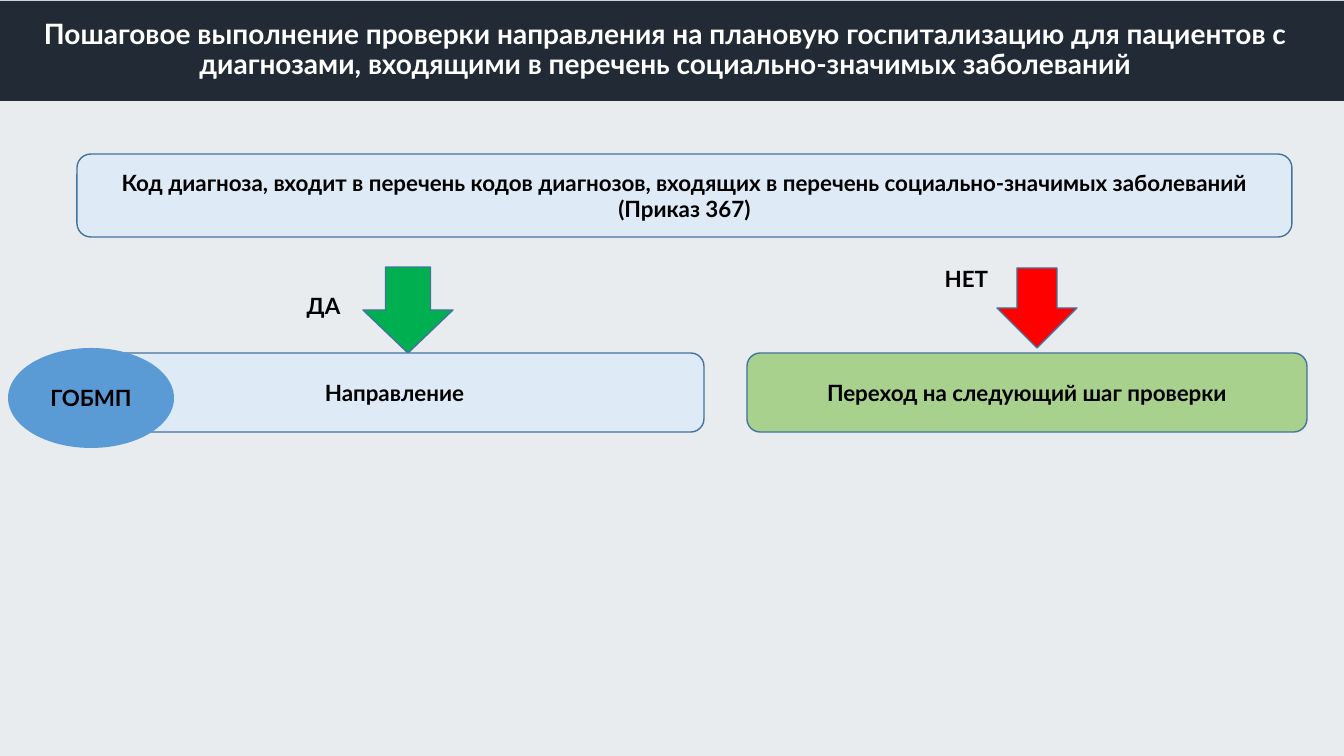
from lxml import etree
from pptx import Presentation
from pptx.dml.color import RGBColor
from pptx.enum.shapes import MSO_SHAPE
from pptx.enum.text import MSO_ANCHOR, PP_ALIGN
from pptx.oxml.ns import qn
from pptx.util import Emu, Pt

RECT = MSO_SHAPE.RECTANGLE
ROUND = MSO_SHAPE.ROUNDED_RECTANGLE
OVAL = MSO_SHAPE.OVAL
ARROW = MSO_SHAPE.DOWN_ARROW
MIDDLE, TOP = MSO_ANCHOR.MIDDLE, MSO_ANCHOR.TOP
CENTER, RIGHT = PP_ALIGN.CENTER, PP_ALIGN.RIGHT

SCALE = 914400 / 100.8
WIDE, HIGH = 1344, 756
FONT = "Lato"

WHITE = RGBColor(0xFF, 0xFF, 0xFF)
BLACK = RGBColor(0, 0, 0)
TINT = RGBColor(0x2C, 0x4A, 0x64)
NAVY = RGBColor(0x22, 0x2A, 0x35)
PALE = RGBColor(0xDE, 0xEB, 0xF7)
LIME = RGBColor(0xA9, 0xD1, 0x8E)
BLUE = RGBColor(0x5B, 0x9B, 0xD5)
EDGE = RGBColor(0x43, 0x73, 0x9E)
GREEN = RGBColor(0x00, 0xB0, 0x50)
RED = RGBColor(0xFF, 0x00, 0x00)


def px(n):
    """Turn pixels into EMU."""
    return Emu(round(n * SCALE))


def write(shape, text, size=16, color=BLACK, align=CENTER, anchor=MIDDLE):
    """Put one bold run of text into a shape."""
    frame = shape.text_frame
    frame.word_wrap = True
    frame.vertical_anchor = anchor
    para = frame.paragraphs[0]
    para.alignment = align
    run = para.add_run()
    run.text = text
    font = run.font
    font.name, font.size, font.bold = FONT, Pt(size), True
    font.color.rgb = color
    return para


def block(slide, kind, area, fill, edge=None, text=None):
    """Add a filled shape, with an outline and text where given."""
    shape = slide.shapes.add_shape(kind, *map(px, area))
    shape.shadow.inherit = False
    shape.fill.solid()
    shape.fill.fore_color.rgb = fill
    if edge is None:
        shape.line.fill.background()
    else:
        shape.line.color.rgb = edge
        shape.line.width = Pt(1)
    if text:
        write(shape, text)
    return shape


def label(slide, area, text, **style):
    """Add a text box and return its paragraph."""
    return write(slide.shapes.add_textbox(*map(px, area)), text, **style)


def fade(shape, percent):
    """Set the opacity of a solid fill."""
    color = shape.fill._xPr.find(qn("a:solidFill"))[0]
    etree.SubElement(color, qn("a:alpha")).set("val", str(percent * 1000))


def main():
    """Build and save the slide."""
    deck = Presentation()
    deck.slide_width, deck.slide_height = px(WIDE), px(HIGH)
    slide = deck.slides.add_slide(deck.slide_layouts[6])

    fade(block(slide, RECT, (0, -2, WIDE, HIGH + 2), TINT), 10)
    block(slide, RECT, (0, 1, WIDE, 100), NAVY)
    title = label(
        slide, (0, 18, 1331, 64),
        "Пошаговое выполнение проверки направления на плановую госпитализацию "
        "для пациентов с диагнозами, входящими в перечень "
        "социально-значимых заболеваний",
        size=20, color=WHITE)
    title.line_spacing = 0.9

    block(slide, ROUND, (77, 154, 1215, 83), PALE, EDGE,
          "Код диагноза, входит в перечень кодов диагнозов, входящих в перечень "
          "социально-значимых заболеваний (Приказ 367)")
    block(slide, ARROW, (363, 267, 90, 86), GREEN, EDGE)
    block(slide, ROUND, (85, 353, 619, 79), PALE, EDGE, "Направление")
    block(slide, ROUND, (747, 353, 560, 79), LIME, EDGE,
          "Переход на следующий шаг проверки")
    block(slide, OVAL, (8, 348, 166, 100), BLUE, text="ГОБМП")
    block(slide, ARROW, (997, 268, 80, 80), RED, EDGE)
    label(slide, (285, 287, 77, 37), "ДА", anchor=TOP)
    label(slide, (910, 260, 88, 37), "НЕТ", align=RIGHT, anchor=TOP)

    deck.save("out.pptx")


if __name__ == "__main__":
    main()
